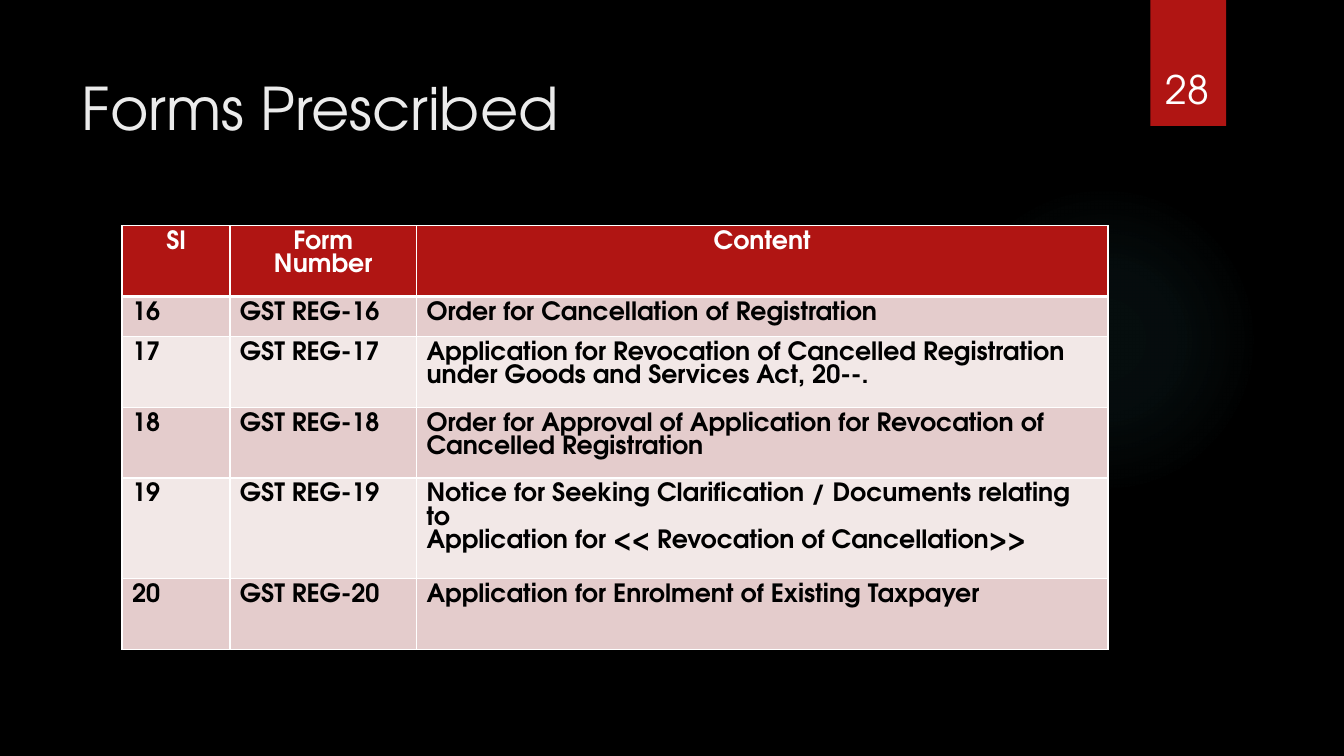
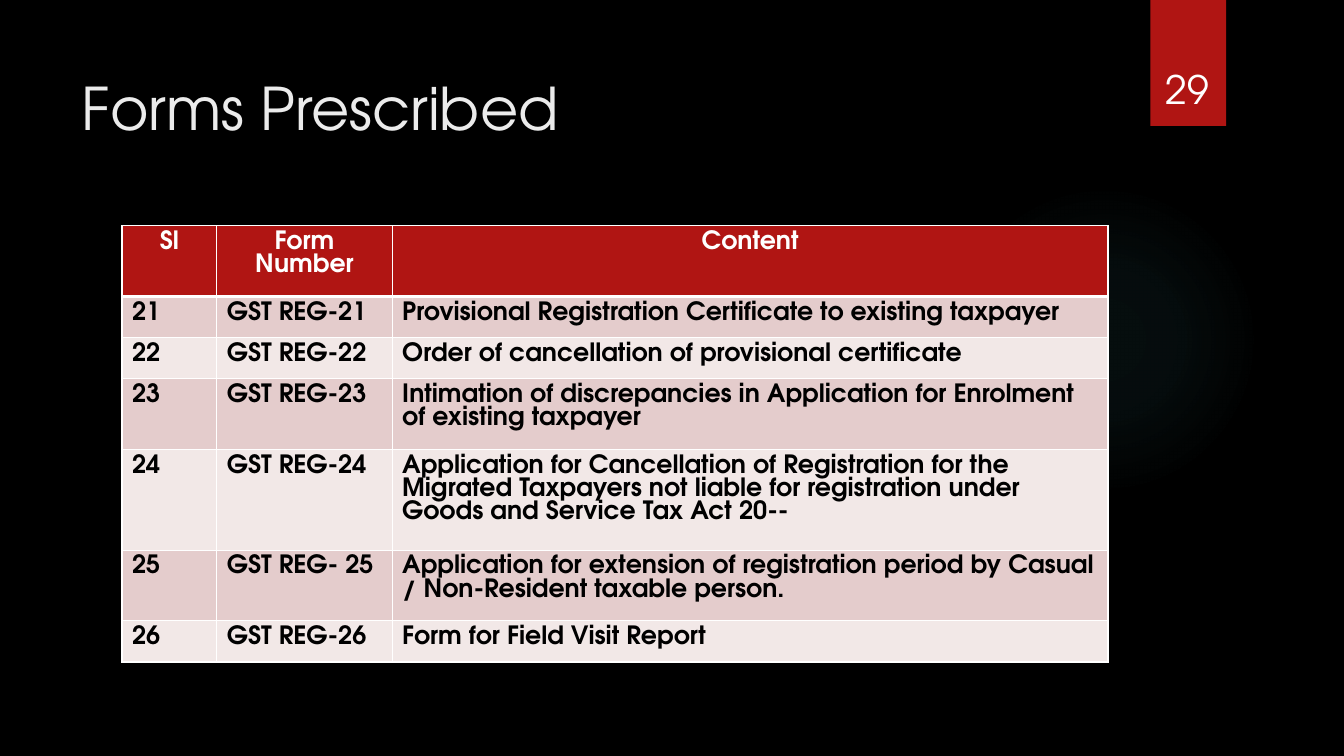
from dataclasses import dataclass

from lxml.etree import SubElement
from pptx import Presentation
from pptx.dml.color import RGBColor
from pptx.enum.shapes import MSO_SHAPE
from pptx.enum.text import MSO_ANCHOR, PP_ALIGN
from pptx.oxml import parse_xml
from pptx.oxml.ns import qn
from pptx.util import Inches, Pt


@dataclass(frozen=True)
class Theme:
    font: str = "TeX Gyre Adventor"
    back: str = "000000"
    red: str = "B01513"
    glow: str = "50B9C1"
    title: str = "EBEBEB"
    white: str = "FFFFFF"
    ink: str = "000000"
    bands: tuple = ("E4CCCC", "F2E8E7")
    big: int = 42
    mid: int = 28
    body: int = 18
    thin: int = 1
    thick: int = 3


THEME = Theme()
WIDE, HIGH = Inches(13.33), Inches(7.5)
HEAD = ("Sl", "Form\nNumber", "Content")

# Each slide: page number, first two column widths in percent, and rows of
# serial, form number, content and height in text lines
PAGES = [
    (28, (8.03, 13.88), [
        ("16", "GST REG-16", "Order for Cancellation of Registration", 1),
        ("17", "GST REG-17", "Application for Revocation of Cancelled Registration "
         "under Goods and Services Act, 20--.", 2),
        ("18", "GST REG-18", "Order for Approval of Application for Revocation of\n"
         "Cancelled Registration", 2),
        ("19", "GST REG-19", "Notice for Seeking Clarification / Documents relating to\n"
         "Application for << Revocation of Cancellation>>", 2.1),
        ("20", "GST REG-20", "Application for Enrolment of Existing Taxpayer", 2),
    ]),
    (29, (7.05, 13.05), [
        ("21", "GST REG-21", "Provisional Registration Certificate to existing taxpayer", 1.03),
        ("22", "GST REG-22", "Order of cancellation of provisional certificate", 1.03),
        ("23", "GST REG-23", "Intimation of discrepancies in Application for Enrolment "
         "of existing taxpayer", 2),
        ("24", "GST REG-24", "Application for Cancellation of Registration for the "
         "Migrated Taxpayers not liable for registration under "
         "Goods and Service Tax Act 20--", 3),
        ("25", "GST REG- 25", "Application for extension of registration period by Casual "
         "/ Non-Resident taxable person.", 2),
        ("26", "GST REG-26", "Form for Field Visit Report", 1.03),
    ]),
]


# Lengths as percent of the slide
def across(share):
    return round(WIDE * share / 100)


def down(share):
    return round(HIGH * share / 100)


def area(left, top, width, height):
    return across(left), down(top), across(width), down(height)


def tall(lines):
    return down(1.33 + 4 * lines)


# Text
def style(frame, size, color, align=PP_ALIGN.LEFT, bold=False):
    for para in frame.paragraphs:
        para.alignment = align
        for run in para.runs:
            font = run.font
            font.name, font.size, font.bold = THEME.font, Pt(size), bold
            font.color.rgb = RGBColor.from_string(color)


def label(slide, box, text, size, color, align=PP_ALIGN.LEFT, anchor=MSO_ANCHOR.TOP):
    frame = slide.shapes.add_textbox(*box).text_frame
    frame.word_wrap = True
    frame.vertical_anchor = anchor
    frame.text = text
    style(frame, size, color, align)
    return frame


# Plain shapes
def block(slide, kind, box, color):
    shape = slide.shapes.add_shape(kind, *box)
    shape.fill.solid()
    shape.fill.fore_color.rgb = RGBColor.from_string(color)
    shape.line.fill.background()
    shape.shadow.inherit = False
    return shape


def tint(node, color, alpha):
    shade = SubElement(node, qn("a:srgbClr"), val=color)
    SubElement(shade, qn("a:alpha"), val=str(alpha * 1000))


def glow(slide):
    shape = block(slide, MSO_SHAPE.OVAL, area(70.59, 24.4, 23.1, 41.07), THEME.glow)
    solid = shape.element.spPr.find(qn("a:solidFill"))
    fade = parse_xml('<a:gradFill xmlns:a="http://schemas.openxmlformats.org/'
                     'drawingml/2006/main" rotWithShape="1"/>')
    stops = SubElement(fade, qn("a:gsLst"))
    for place, alpha in ((0, 7), (36, 6), (69, 0)):
        tint(SubElement(stops, qn("a:gs"), pos=str(place * 1000)), THEME.glow, alpha)
    ring = SubElement(fade, qn("a:path"), path="circle")
    SubElement(ring, qn("a:fillToRect"), l="50000", t="50000", r="50000", b="50000")
    solid.getparent().replace(solid, fade)


def ribbon(slide, page):
    shape = block(slide, MSO_SHAPE.RECTANGLE, area(85.6, 0, 5.63, 16.67), THEME.red)
    effect = shape.element.spPr.find(qn("a:effectLst"))
    shadow = SubElement(effect, qn("a:outerShdw"), blurRad=str(Pt(3)),
                        dist=str(Pt(2)), dir="5400000", rotWithShape="0")
    tint(shadow, THEME.back, 45)
    label(slide, area(84.92, 4.27, 6.9, 11.2), str(page), THEME.mid, THEME.white,
          PP_ALIGN.CENTER, MSO_ANCHOR.BOTTOM)


# Table
def border(cell, top, base):
    props = cell._tc.get_or_add_tcPr()
    sides = {"L": THEME.thin, "R": THEME.thin, "T": top, "B": base}
    for side, width in sides.items():
        line = SubElement(props, qn("a:ln" + side), w=str(Pt(width)))
        fill = SubElement(line, qn("a:solidFill"))
        SubElement(fill, qn("a:srgbClr"), val=THEME.white)


def grid(slide, widths, rows):
    heights = [tall(2)] + [tall(row[-1]) for row in rows]
    texts = [HEAD] + [row[:-1] for row in rows]
    total = 73.37
    box = across(9.08), down(29.87), across(total), sum(heights)
    table = slide.shapes.add_table(len(texts), len(HEAD), *box).table
    table.horz_banding = False
    for col, width in zip(table.columns, (*widths, total - sum(widths))):
        col.width = across(width)
    for i, (row, height, words) in enumerate(zip(table.rows, heights, texts)):
        row.height = height
        head = i == 0
        fill = THEME.red if head else THEME.bands[(i - 1) % 2]
        color = THEME.white if head else THEME.ink
        align = PP_ALIGN.CENTER if head else PP_ALIGN.LEFT
        for cell, text in zip(row.cells, words):
            cell.text_frame.text = text
            style(cell.text_frame, THEME.body, color, align, True)
            border(cell, THEME.thick if i == 1 else THEME.thin,
                   THEME.thick if head else THEME.thin)
            cell.fill.solid()
            cell.fill.fore_color.rgb = RGBColor.from_string(fill)


# Shared frame of every slide
def frame(deck, page, title):
    slide = deck.slides.add_slide(deck.slide_layouts[6])
    slide.background.fill.solid()
    slide.background.fill.fore_color.rgb = RGBColor.from_string(THEME.back)
    glow(slide)
    ribbon(slide, page)
    head = label(slide, area(5.33, 6.67, 77.19, 20.4), title, THEME.big, THEME.title)
    head.margin_top = down(2.8)
    return slide


def main():
    deck = Presentation()
    deck.slide_width, deck.slide_height = WIDE, HIGH
    for page, widths, rows in PAGES:
        grid(frame(deck, page, "Forms Prescribed"), widths, rows)
    deck.save("out.pptx")


if __name__ == "__main__":
    main()
